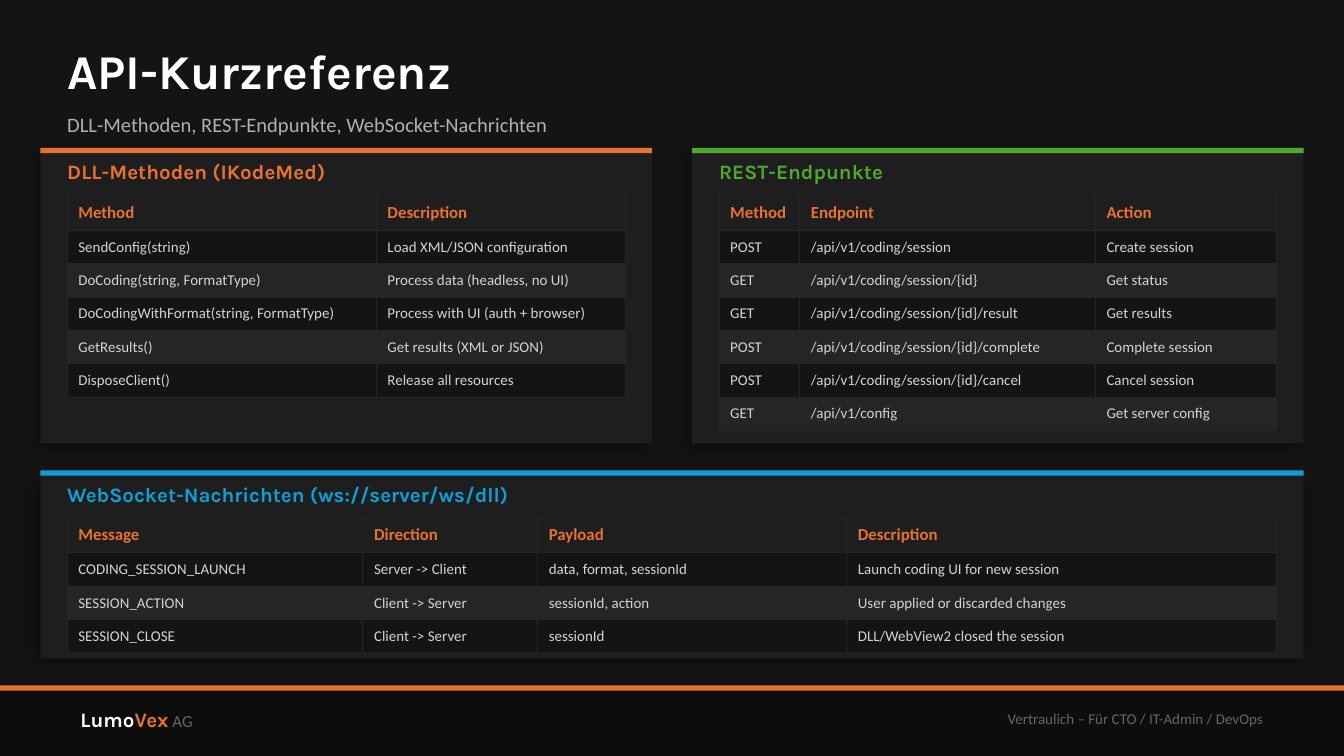
from lxml import etree
from pptx import Presentation
from pptx.dml.color import RGBColor as RGB
from pptx.enum.shapes import MSO_SHAPE as SHAPE
from pptx.enum.text import MSO_ANCHOR as ANCHOR, MSO_AUTO_SIZE as AUTO, PP_ALIGN as ALIGN
from pptx.oxml import parse_xml
from pptx.oxml.ns import nsdecls, qn
from pptx.util import Inches, Pt

HEAD, BODY = "Karla", "Calibri"
BACKGROUND = RGB(0x14, 0x14, 0x14)
FOOTER = RGB(0x0D, 0x0D, 0x0D)
PANEL = RGB(0x1E, 0x1E, 0x1E)
BAND = RGB(0x25, 0x25, 0x25)
WHITE = RGB(0xFF, 0xFF, 0xFF)
CELL_TEXT = RGB(0xD4, 0xD4, 0xD4)
SUBTITLE = RGB(0xB0, 0xB0, 0xB0)
GREY = RGB(0x66, 0x66, 0x66)
ORANGE = RGB(0xE9, 0x71, 0x32)
GREEN = RGB(0x4E, 0xA7, 0x2E)
BLUE = RGB(0x0F, 0x9E, 0xD5)

SLIDE_W = 10
SLIDE_H = SLIDE_W * 9 / 16
FOOTER_TOP = 5.1
MARGIN = 0.2  # panel edge to its heading and table
RULE = 0.04  # thickness of the coloured bars
HEADER_ROW, BODY_ROW = 0.26, 0.24  # least heights, rows grow to fit their text

DLL_METHODS = [
    ("Method", "Description"),
    ("SendConfig(string)", "Load XML/JSON configuration"),
    ("DoCoding(string, FormatType)", "Process data (headless, no UI)"),
    ("DoCodingWithFormat(string, FormatType)", "Process with UI (auth + browser)"),
    ("GetResults()", "Get results (XML or JSON)"),
    ("DisposeClient()", "Release all resources"),
]
REST_ENDPOINTS = [
    ("Method", "Endpoint", "Action"),
    ("POST", "/api/v1/coding/session", "Create session"),
    ("GET", "/api/v1/coding/session/{id}", "Get status"),
    ("GET", "/api/v1/coding/session/{id}/result", "Get results"),
    ("POST", "/api/v1/coding/session/{id}/complete", "Complete session"),
    ("POST", "/api/v1/coding/session/{id}/cancel", "Cancel session"),
    ("GET", "/api/v1/config", "Get server config"),
]
WS_MESSAGES = [
    ("Message", "Direction", "Payload", "Description"),
    ("CODING_SESSION_LAUNCH", "Server -> Client", "data, format, sessionId",
     "Launch coding UI for new session"),
    ("SESSION_ACTION", "Client -> Server", "sessionId, action",
     "User applied or discarded changes"),
    ("SESSION_CLOSE", "Client -> Server", "sessionId", "DLL/WebView2 closed the session"),
]


def set_font(font, size, color, name=BODY, bold=False):
    font.name, font.size, font.bold = name, Pt(size), bold
    font.color.rgb = color


def add_rect(s, x, y, w, h, color):
    sp = s.shapes.add_shape(SHAPE.RECTANGLE, Inches(x), Inches(y), Inches(w), Inches(h))
    sp.shadow.inherit = False
    sp.fill.solid()
    sp.fill.fore_color.rgb = color
    sp.line.fill.background()
    return sp


def add_shadow(sp):
    """Soft black shadow, 8 pt blur, 3 pt towards the lower left."""
    effects = sp._element.spPr.find(qn("a:effectLst"))
    effects.append(parse_xml(
        f'<a:outerShdw {nsdecls("a")} blurRad="{Pt(8)}" dist="{Pt(3)}" dir="{135 * 60000}" '
        'algn="bl" rotWithShape="0"><a:srgbClr val="000000"><a:alpha val="35000"/>'
        '</a:srgbClr></a:outerShdw>'))


def setup_frame(tf, inset=True):
    tf.word_wrap = True
    tf.auto_size = AUTO.NONE
    tf.vertical_anchor = ANCHOR.MIDDLE
    if not inset:
        tf.margin_left = tf.margin_right = tf.margin_top = tf.margin_bottom = 0
    return tf.paragraphs[0]


def add_text(s, x, y, w, h, text, size, color, name=BODY, bold=False, inset=False):
    box = s.shapes.add_textbox(Inches(x), Inches(y), Inches(w), Inches(h))
    p = setup_frame(box.text_frame, inset)
    if text:
        p.text = text
        set_font(p.font, size, color, name, bold)
    return p


def set_borders(cell):
    tc_pr = cell._tc.get_or_add_tcPr()
    for side in ("a:lnL", "a:lnR", "a:lnT", "a:lnB"):
        line = etree.SubElement(tc_pr, qn(side), w=str(Pt(0.5)))
        line.append(parse_xml(
            f'<a:solidFill {nsdecls("a")}><a:srgbClr val="{BAND}"/></a:solidFill>'))


def add_table(s, x, y, widths, rows):
    height = HEADER_ROW + BODY_ROW * (len(rows) - 1)
    table = s.shapes.add_table(len(rows), len(widths), Inches(x), Inches(y),
                               Inches(sum(widths)), Inches(height)).table
    table.first_row = table.horz_banding = False
    for column, width in zip(table.columns, widths):
        column.width = Inches(width)
    for i, values in enumerate(rows):
        header = i == 0
        table.rows[i].height = Inches(HEADER_ROW if header else BODY_ROW)
        fill = PANEL if header else BACKGROUND if i % 2 else BAND
        for j, value in enumerate(values):
            cell = table.cell(i, j)
            set_borders(cell)
            cell.fill.solid()
            cell.fill.fore_color.rgb = fill
            cell.vertical_anchor = ANCHOR.MIDDLE
            cell.margin_left = cell.margin_right = Pt(6)
            cell.margin_top = cell.margin_bottom = Pt(4)
            p = cell.text_frame.paragraphs[0]
            p.text = value
            set_font(p.font, 9 if header else 8, ORANGE if header else CELL_TEXT, bold=header)


def add_panel(s, x, y, w, h, color, heading, widths, rows):
    add_shadow(add_rect(s, x, y, w, h, PANEL))
    add_rect(s, x, y, w, RULE, color)
    left = x + MARGIN
    add_text(s, left, y + 0.05, w - 2 * MARGIN, 0.25, heading, 11, color, HEAD, True)
    add_table(s, left, y + 0.35, widths, rows)


def add_title(s):
    title = s.shapes.title
    title.left, title.top = Inches(0.5), Inches(0.25)
    title.width, title.height = Inches(9), Inches(0.55)
    p = setup_frame(title.text_frame, inset=False)
    p.text = "API-Kurzreferenz"
    p.alignment = ALIGN.LEFT
    set_font(p.font, 26, WHITE, HEAD, True)
    add_text(s, 0.5, 0.75, 9, 0.35, "DLL-Methoden, REST-Endpunkte, WebSocket-Nachrichten",
             11, SUBTITLE)


def add_footer(s):
    add_rect(s, 0, FOOTER_TOP, SLIDE_W, SLIDE_H - FOOTER_TOP, FOOTER)
    add_rect(s, 0, FOOTER_TOP, SLIDE_W, RULE, ORANGE)
    # Company name in two colours
    p = add_text(s, 0.5, 5.15, 3, 0.4, "", 11, WHITE, inset=True)
    for text, size, color, name, bold in (("Lumo", 11, WHITE, HEAD, True),
                                          ("Vex", 11, ORANGE, HEAD, True),
                                          (" AG", 9, GREY, BODY, False)):
        r = p.add_run()
        r.text = text
        set_font(r.font, size, color, name, bold)
    note = add_text(s, 5.5, 5.15, 4, 0.4, "Vertraulich – Für CTO / IT-Admin / DevOps",
                    8, GREY, inset=True)
    note.alignment = ALIGN.RIGHT


def main():
    prs = Presentation()
    prs.slide_width, prs.slide_height = Inches(SLIDE_W), Inches(SLIDE_H)
    s = prs.slides.add_slide(prs.slide_layouts[5])
    s.background.fill.solid()
    s.background.fill.fore_color.rgb = BACKGROUND

    add_footer(s)
    add_title(s)
    add_panel(s, 0.3, 1.1, 4.55, 2.2, ORANGE, "DLL-Methoden (IKodeMed)",
              (2.3, 1.85), DLL_METHODS)
    add_panel(s, 5.15, 1.1, 4.55, 2.2, GREEN, "REST-Endpunkte",
              (0.6, 2.2, 1.35), REST_ENDPOINTS)
    add_panel(s, 0.3, 3.5, 9.4, 1.4, BLUE, "WebSocket-Nachrichten (ws://server/ws/dll)",
              (2.2, 1.3, 2.3, 3.2), WS_MESSAGES)
    prs.save("out.pptx")


if __name__ == "__main__":
    main()
